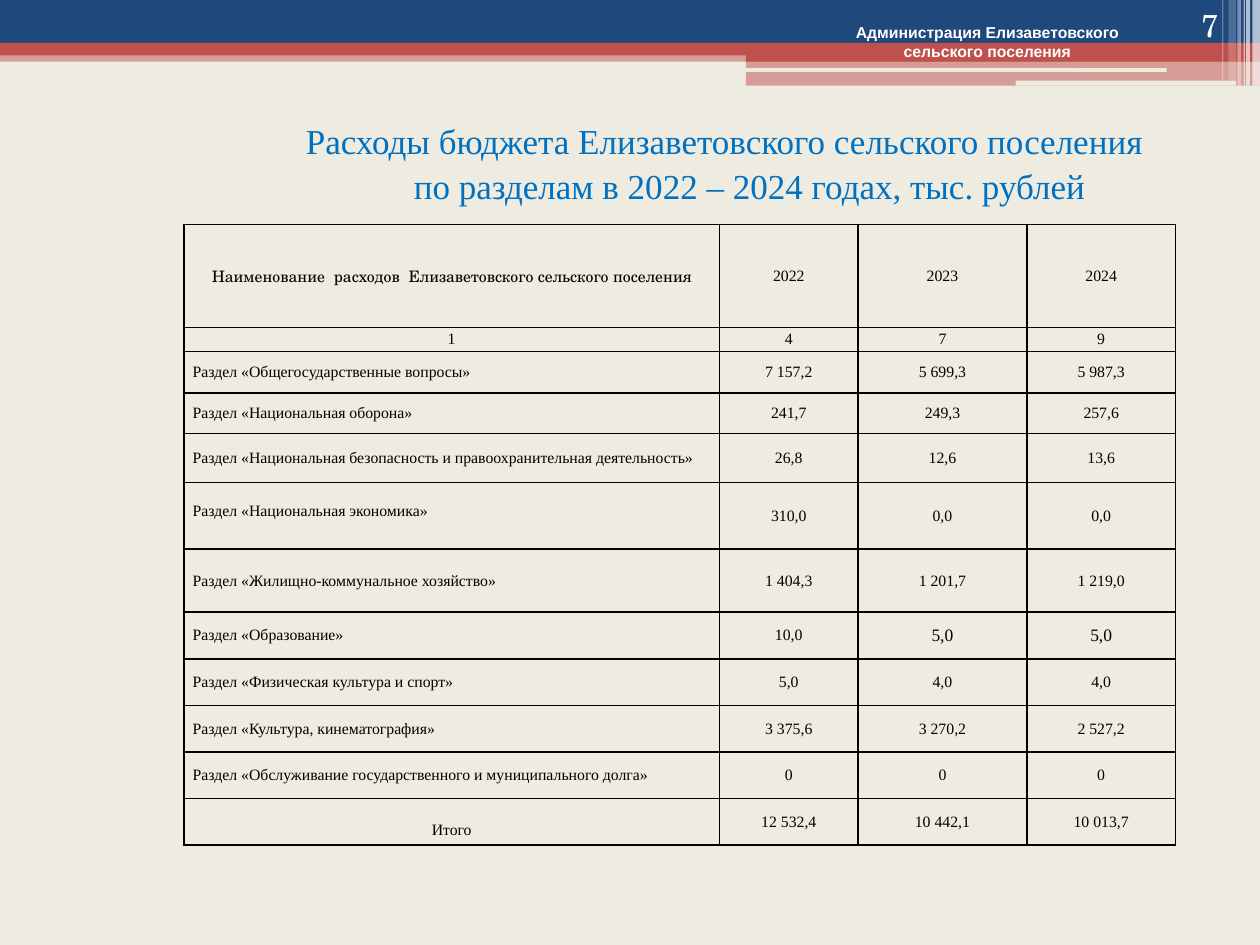
"""Builds the slide on budget spending by section, 2022 to 2024."""
import pptx
import pptx.util
import pptx.dml.color
import pptx.enum.shapes
import pptx.enum.text
import pptx.oxml
import pptx.oxml.ns
import lxml.etree

RGB = pptx.dml.color.RGBColor.from_string
ALIGN = pptx.enum.text.PP_ALIGN
ANCHOR = pptx.enum.text.MSO_ANCHOR
SHAPE = pptx.enum.shapes.MSO_SHAPE
QN = pptx.oxml.ns.qn

THEME = {
    "paper": "EEECE1", "navy": "1F497D", "red": "C0504D", "white": "FFFFFF",
    "blue": "0070C0", "black": "000000",
    "serif": "Times New Roman", "sans": "Arial", "school": "TeX Gyre Schola",
    "title": 20, "number": 18, "large": 10, "body": 9, "border": 1,
}

prs = pptx.Presentation()
prs.slide_width = pptx.util.Inches(10)
prs.slide_height = pptx.util.Inches(7.5)
COL = prs.slide_width // 1000
ROW = prs.slide_height // 750
s = prs.slides.add_slide(prs.slide_layouts[6])
s.background.fill.solid()
s.background.fill.fore_color.rgb = RGB(THEME["paper"])


def style(p, font, size, color, align, bold=False):
    p.alignment = align
    for r in p.runs:
        r.font.name = THEME[font]
        r.font.size = pptx.util.Pt(THEME[size])
        r.font.color.rgb = RGB(THEME[color])
        r.font.bold = bold


def add_text(left, top, width, height, text, font, size, color, align, anchor, bold=False):
    tf = s.shapes.add_textbox(left * COL, top * ROW, width * COL, height * ROW).text_frame
    tf.word_wrap = True
    tf.vertical_anchor = anchor
    tf.text = text
    for p in tf.paragraphs:
        style(p, font, size, color, align, bold)
    return tf


bands = [
    ("rect", 0, 40, 1000, 9, "red", 50),
    ("rect", 0, 0, 1000, 34, "navy", 100),
    ("rect", 0, 34, 1000, 10, "red", 100),
    ("rect", 592, 39, 408, 10, "red", 100),
    ("rect", 592, 48, 408, 20, "red", 50),
    ("round", 591, 54, 335, 3, "paper", 100),
    ("round", 806, 64, 175, 4, "paper", 100),
]
stripes = [(994, 6, 68, 65), (989, 3, 68, 65), (987, 1, 68, 60),
           (982, 3, 68, 40), (975, 6, 64, 20), (970, 1, 64, 30)]
bands += [("rect", left, 0, width, height, "white", alpha) for left, width, height, alpha in stripes]
for kind, left, top, width, height, color, alpha in bands:
    preset = SHAPE.ROUNDED_RECTANGLE if kind == "round" else SHAPE.RECTANGLE
    sp = s.shapes.add_shape(preset, left * COL, top * ROW, width * COL, height * ROW)
    sp.shadow.inherit = False
    sp.line.fill.background()
    sp.fill.solid()
    sp.fill.fore_color.rgb = RGB(THEME[color])
    if alpha < 100:
        rgb = sp.fill._xPr.find(".//" + QN("a:srgbClr"))
        lxml.etree.SubElement(rgb, QN("a:alpha"), val=str(alpha * 1000))

title = add_text(2, 80, 996, 99,
                 "Расходы бюджета Елизаветовского сельского поселения\n"
                 "по разделам в 2022 – 2024 годах, тыс. рублей",
                 "serif", "title", "blue", ALIGN.CENTER, ANCHOR.MIDDLE)
for p, indent in zip(title.paragraphs, (150, 190)):
    p._p.get_or_add_pPr().set("marL", str(indent * COL))
title.paragraphs[1].space_before = pptx.util.Pt(1.5)

add_text(628, 13, 311, 40, "Администрация Елизаветовского\nсельского поселения",
         "sans", "body", "white", ALIGN.CENTER, ANCHOR.TOP, True)
add_text(894, 0, 83, 40, "7", "school", "number", "white", ALIGN.RIGHT, ANCHOR.BOTTOM)

widths = [425, 110, 134, 118]
heights = [82, 19, 33, 32, 39, 53, 50] + [37] * 5
rows = [
    ("Наименование  расходов  Елизаветовского сельского поселения", "2022", "2023", "2024"),
    ("1", "4", "7", "9"),
    ("Раздел «Общегосударственные вопросы»", "7 157,2", "5 699,3", "5 987,3"),
    ("Раздел «Национальная оборона»", "241,7", "249,3", "257,6"),
    ("Раздел «Национальная безопасность и правоохранительная деятельность»", "26,8", "12,6", "13,6"),
    ("Раздел «Национальная экономика»", "310,0", "0,0", "0,0"),
    ("Раздел «Жилищно-коммунальное хозяйство»", "1 404,3", "1 201,7", "1 219,0"),
    ("Раздел «Образование»", "10,0", "5,0", "5,0"),
    ("Раздел «Физическая культура и спорт»", "5,0", "4,0", "4,0"),
    ("Раздел «Культура, кинематография»", "3 375,6", "3 270,2", "2 527,2"),
    ("Раздел «Обслуживание государственного и муниципального долга»", "0", "0", "0"),
    ("Итого", "12 532,4", "10 442,1", "10 013,7"),
]
table = s.shapes.add_table(len(rows), len(widths), 146 * COL, 178 * ROW,
                           sum(widths) * COL, sum(heights) * ROW).table
table.first_row = table.horz_banding = False
for column, width in zip(table.columns, widths):
    column.width = width * COL
for row, height in zip(table.rows, heights):
    row.height = height * ROW

for i, values in enumerate(rows):
    for j, value in enumerate(values):
        cell = table.cell(i, j)
        cell.margin_left = cell.margin_right = 7 * COL
        cell.margin_top = cell.margin_bottom = 0
        cell.vertical_anchor = ANCHOR.MIDDLE
        cell.text_frame.text = value
        left_aligned = j == 0 and value.startswith("Раздел")
        style(cell.text_frame.paragraphs[0],
              "school" if i == j == 0 else "serif",
              "large" if value == "5,0" and j > 1 else "body",
              "black", ALIGN.LEFT if left_aligned else ALIGN.CENTER)
        tcPr = cell._tc.get_or_add_tcPr()
        for side in ("a:lnL", "a:lnR", "a:lnT", "a:lnB"):
            ln = lxml.etree.SubElement(tcPr, QN(side), w=str(pptx.util.Pt(THEME["border"])))
            fill = lxml.etree.SubElement(ln, QN("a:solidFill"))
            lxml.etree.SubElement(fill, QN("a:srgbClr"), val=THEME["black"])
        cell.fill.background()
table.cell(5, 0).margin_bottom = 7 * ROW
table.cell(11, 0).margin_top = 14 * ROW

prs.save("out.pptx")
